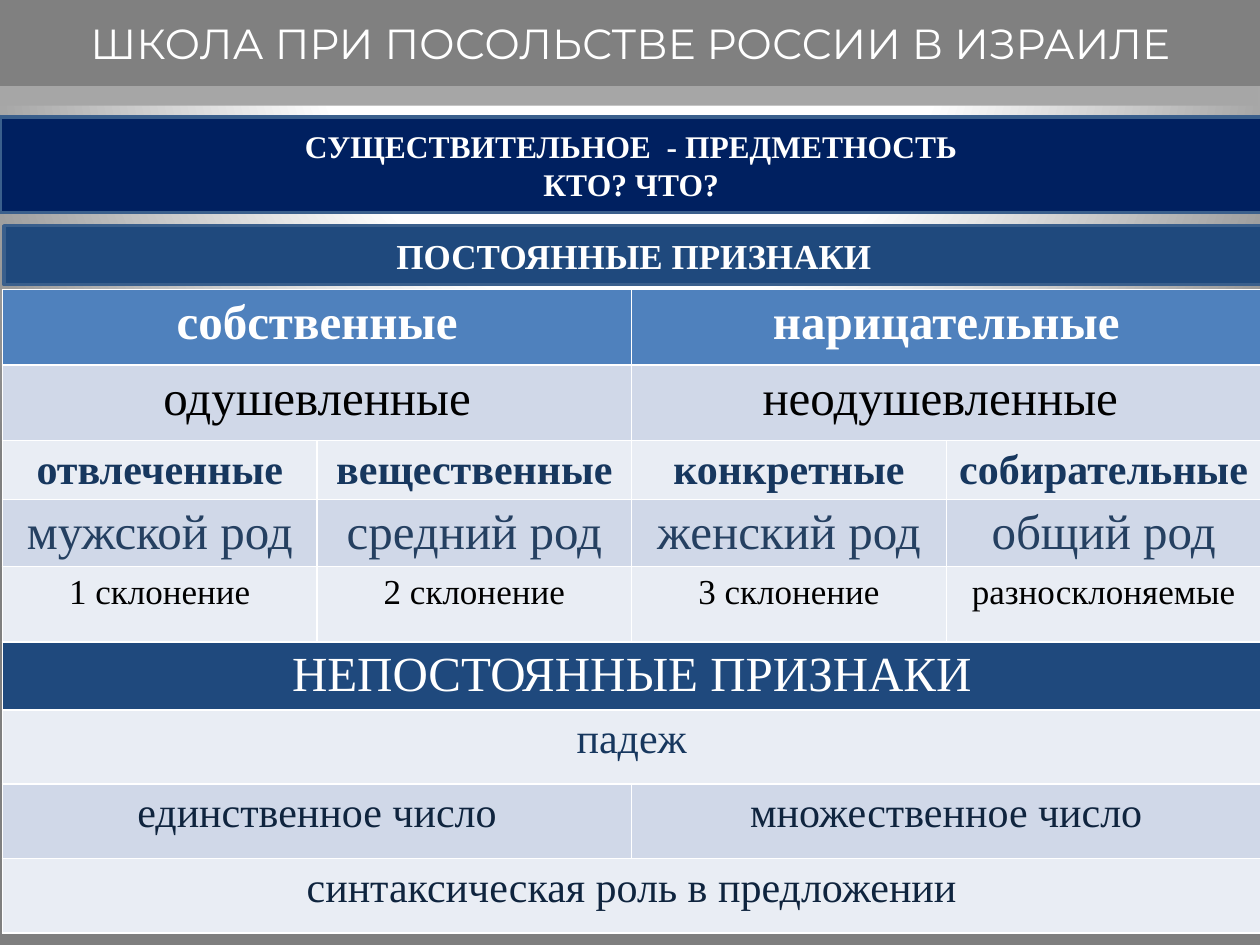
from pptx import Presentation
from pptx import util as u
from pptx.dml.color import RGBColor
from pptx.enum import shapes, text
from pptx.oxml import parse_xml
from pptx.oxml.ns import nsdecls

SERIF = "Times New Roman"
COLUMNS = 4
LIGHT, MEDIUM, ACCENT, NAVY = "E9EDF4", "D0D8E8", "4F81BD", "1F497D"

# height in cm, fill, font size, font colour, bold, texts sharing the row equally
TABLE_ROWS = [
    (1.52, ACCENT, 28, "FFFFFF", True, ["собственные", "нарицательные"]),
    (1.52, MEDIUM, 28, "000000", False, ["одушевленные", "неодушевленные "]),
    (1.09, LIGHT, 24, "17375E", True,
     ["отвлеченные", "вещественные", "конкретные", "собирательные"]),
    (1.24, MEDIUM, 28, "254061", False,
     ["мужской род", "средний род", "женский род", "общий род"]),
    (1.52, LIGHT, 20, "000000", False,
     ["1 склонение", "2 склонение", "3 склонение", "разносклоняемые"]),
    (1.37, NAVY, 28, "FFFFFF", False, ["НЕПОСТОЯННЫЕ ПРИЗНАКИ"]),
    (1.5, LIGHT, 24, "17375E", False, ["падеж"]),
    (1.5, MEDIUM, 24, "0F243E", False, ["единственное число", "множественное число"]),
    (1.5, LIGHT, 24, "0F243E", False, ["синтаксическая роль в предложении"]),
]


def paint(fill, colour):
    fill.solid()
    fill.fore_color.rgb = RGBColor.from_string(colour)


def write_centred(frame, lines, size, colour="FFFFFF", bold=False, font_name=SERIF):
    frame.text = "\n".join(lines)
    for paragraph in frame.paragraphs:
        paragraph.alignment = text.PP_ALIGN.CENTER
        font = paragraph.font
        font.name, font.size, font.bold = font_name, u.Pt(size), bold
        paint(font.fill, colour)


def set_background(slide):
    """Radial gradient centred above the slide, white turning to grey."""
    stops = "".join(
        f'<a:gs pos="{position * 1000}"><a:srgbClr val="{colour}"/></a:gs>'
        for position, colour in [(0, "FFFFFF"), (40, "FEFEFE"), (100, "7F7F7F")])
    slide.background.fill.gradient()
    properties = slide._element.cSld.bg.bgPr
    gradient = parse_xml(
        f'<a:gradFill {nsdecls("a")} rotWithShape="1"><a:gsLst>{stops}</a:gsLst>'
        '<a:path path="circle"><a:fillToRect l="50000" t="-80000" r="50000" b="180000"/>'
        '</a:path></a:gradFill>')
    properties.replace(properties[0], gradient)


def add_band(slide, left, top, width, height, colour, outline=None):
    band = slide.shapes.add_shape(shapes.MSO_SHAPE.RECTANGLE,
                                  u.Cm(left), u.Cm(top), u.Cm(width), u.Cm(height))
    band.shadow.inherit = False
    paint(band.fill, colour)
    if outline:
        paint(band.line.fill, outline)
        band.line.width = u.Pt(2)
    else:
        band.line.fill.background()
    band.text_frame.vertical_anchor = text.MSO_ANCHOR.MIDDLE
    return band


def add_features_table(slide):
    height = sum(row[0] for row in TABLE_ROWS)
    table = slide.shapes.add_table(len(TABLE_ROWS), COLUMNS, u.Cm(0.05), u.Cm(5.84),
                                   u.Cm(25.37), u.Cm(height)).table
    for r, (row_height, fill, size, colour, bold, texts) in enumerate(TABLE_ROWS):
        table.rows[r].height = u.Cm(row_height)
        span = COLUMNS // len(texts)
        for i, feature in enumerate(texts):
            cell = table.cell(r, i * span)
            if span > 1:
                cell.merge(table.cell(r, (i + 1) * span - 1))
            paint(cell.fill, fill)
            write_centred(cell.text_frame, [feature], size, colour, bold)


def place_school_name(slide):
    school = slide.shapes.title
    school.left, school.top, school.width, school.height = (
        u.Cm(0), u.Cm(0), u.Cm(25.4), u.Cm(1.73))
    paint(school.fill, "808080")
    school.text_frame.vertical_anchor = text.MSO_ANCHOR.MIDDLE
    school.text_frame.auto_size = text.MSO_AUTO_SIZE.NONE
    write_centred(school.text_frame, ["ШКОЛА ПРИ ПОСОЛЬСТВЕ РОССИИ В ИЗРАИЛЕ"], 24,
                  font_name="Montserrat")
    slide.shapes._spTree.append(school._element)  # in front of the strip below it


def main():
    deck = Presentation()
    deck.slide_width, deck.slide_height = u.Cm(25.4), u.Cm(19.05)
    slide = deck.slides.add_slide(deck.slide_layouts[5])
    set_background(slide)

    noun = add_band(slide, 0, 2.36, 25.45, 1.93, "002060", "3A5F8C")
    write_centred(noun.text_frame, ["СУЩЕСТВИТЕЛЬНОЕ  - ПРЕДМЕТНОСТЬ", "КТО? ЧТО?"],
                  18, bold=True)
    constant = add_band(slide, 0.08, 4.55, 25.4, 1.19, NAVY, "3A5F8C")
    write_centred(constant.text_frame, ["ПОСТОЯННЫЕ ПРИЗНАКИ"], 20, bold=True)
    add_features_table(slide)
    add_band(slide, 0, 1.42, 25.35, 0.71, "A6A6A6")
    place_school_name(slide)

    deck.save("out.pptx")


if __name__ == "__main__":
    main()
